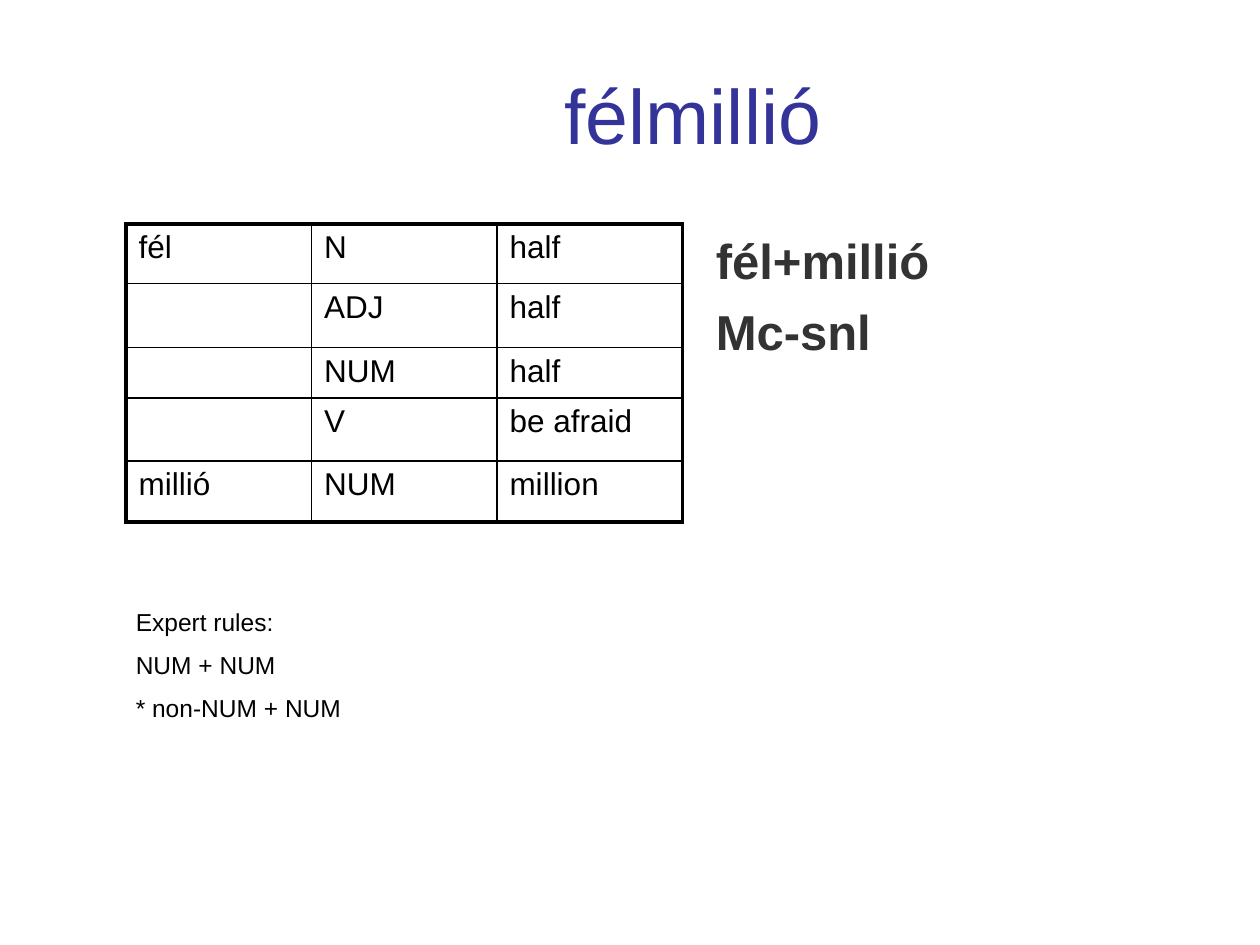
from pptx import Presentation
from pptx.dml.color import RGBColor
from pptx.enum.text import MSO_ANCHOR, PP_ALIGN
from pptx.oxml import parse_xml
from pptx.oxml.ns import nsdecls
from pptx.util import Pt

LEFT, CENTER = PP_ALIGN.LEFT, PP_ALIGN.CENTER
TOP, MIDDLE = MSO_ANCHOR.TOP, MSO_ANCHOR.MIDDLE
BLACK, INDIGO, CHARCOAL = "000000", "333399", "333333"
THIN, THICK = 1, 2.25


def rgb(value):
    return RGBColor.from_string(value)


class SlideBuilder:
    font = "Arial"

    def __init__(self, slide):
        self.slide = slide

    def add_run(self, paragraph, text, size, color, bold=False):
        run = paragraph.add_run()
        run.text = text
        run.font.name = self.font
        run.font.size = Pt(size)
        run.font.bold = bold
        run.font.color.rgb = rgb(color)

    def text(self, box, lines, size, color, bold=False, gap=0, align=LEFT, anchor=TOP):
        frame = self.slide.shapes.add_textbox(*map(Pt, box)).text_frame
        frame.word_wrap = True
        frame.vertical_anchor = anchor
        for index, line in enumerate(lines):
            paragraph = frame.add_paragraph() if index else frame.paragraphs[0]
            paragraph.alignment = align
            if index:
                paragraph.space_before = Pt(gap)
            self.add_run(paragraph, line, size, color, bold)

    def borders(self, cell, widths):
        """Draw the left, right, top and bottom edges, widths in points."""
        properties = cell._tc.get_or_add_tcPr()
        for position, (side, width) in enumerate(zip("LRTB", widths)):
            properties.insert(position, parse_xml(
                f'<a:ln{side} {nsdecls("a")} w="{Pt(width)}"><a:solidFill>'
                f'<a:srgbClr val="{BLACK}"/></a:solidFill></a:ln{side}>'))

    def table(self, left, top, column_width, row_heights, rows, size):
        last_row, last_column = len(rows) - 1, len(rows[0]) - 1
        table = self.slide.shapes.add_table(
            len(rows), len(rows[0]), Pt(left), Pt(top),
            Pt(column_width * len(rows[0])), Pt(sum(row_heights))).table
        table.first_row = table.horz_banding = False
        for column in table.columns:
            column.width = Pt(column_width)
        for r, (height, words) in enumerate(zip(row_heights, rows)):
            table.rows[r].height = Pt(height)
            for c, word in enumerate(words):
                cell = table.cell(r, c)
                cell.fill.background()
                outer = (c == 0, c == last_column, r == 0, r == last_row)
                self.borders(cell, [THICK if edge else THIN for edge in outer])
                if word:
                    self.add_run(cell.text_frame.paragraphs[0], word, size, BLACK)


def main():
    deck = Presentation()
    deck.slide_width, deck.slide_height = Pt(720), Pt(540)
    builder = SlideBuilder(deck.slides.add_slide(deck.slide_layouts[6]))

    builder.text((72, 20, 648, 90), ["félmillió"], 44, INDIGO,
                 align=CENTER, anchor=MIDDLE)
    builder.text((402, 128, 318, 356), ["fél+millió", "Mc-snl"], 28, CHARCOAL,
                 bold=True, gap=7)
    readings = [
        ("fél", "N", "half"),
        ("", "ADJ", "half"),
        ("", "NUM", "half"),
        ("", "V", "be afraid"),
        ("millió", "NUM", "million"),
    ]
    builder.table(72, 128, 106, (34, 36.5, 27.5, 36, 35), readings, 18)
    builder.text((70.5, 343.5, 323, 94),
                 ["Expert rules:", "NUM + NUM", "* non-NUM + NUM"], 14, BLACK, gap=7.6)
    deck.save("out.pptx")


if __name__ == "__main__":
    main()
